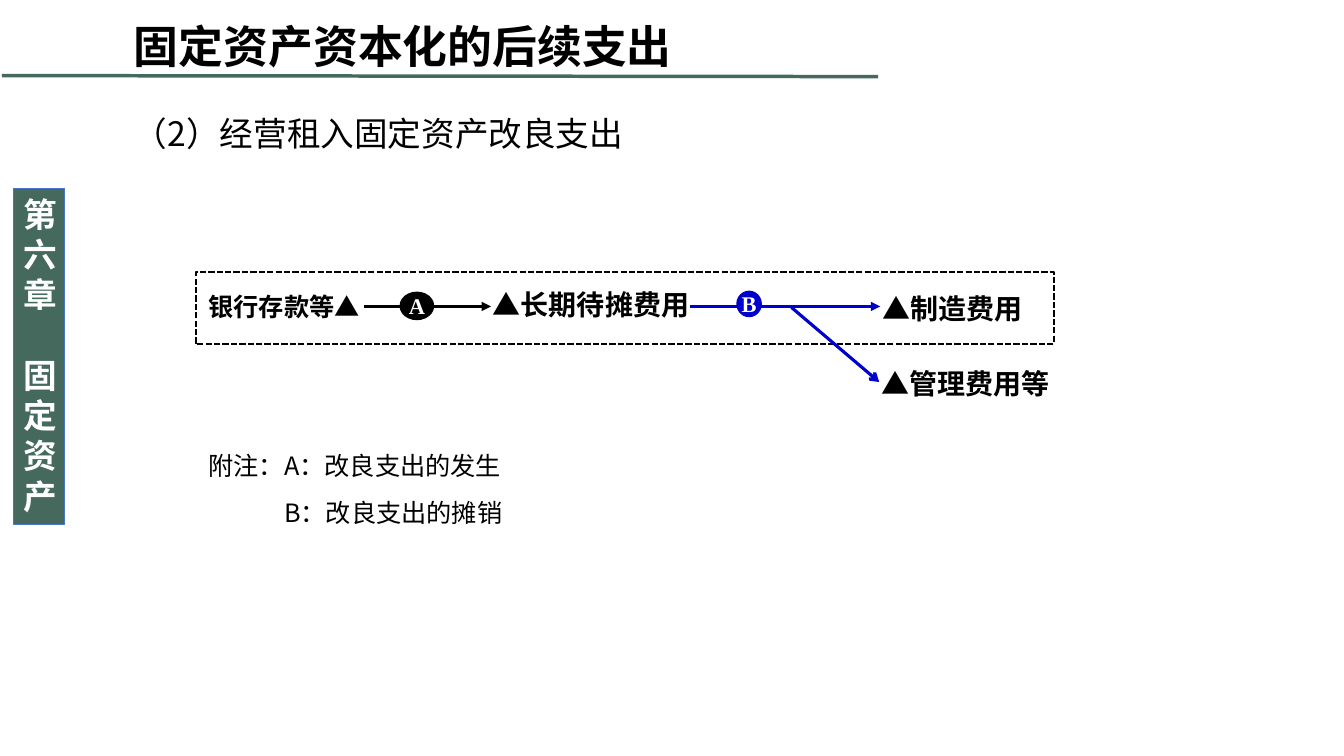
from pptx import Presentation
from pptx.dml.color import RGBColor
from pptx.enum.dml import MSO_LINE
from pptx.enum.shapes import MSO_CONNECTOR, MSO_SHAPE
from pptx.enum.text import MSO_ANCHOR, PP_ALIGN
from pptx.oxml.ns import qn
from pptx.util import Inches, Pt
from lxml import etree

BLACK = RGBColor(0, 0, 0)
WHITE = RGBColor(0xFF, 0xFF, 0xFF)
GREEN = RGBColor(0x45, 0x69, 0x5D)
BLUE = RGBColor(0x00, 0x00, 0xCC)
EDGE_BLUE = RGBColor(0x48, 0x74, 0xCB)
CJK = "Noto Sans CJK SC"
LATIN = "Times New Roman"

CHAPTER = ["第六章", "固定资产"]
CHAPTER_PITCH = 28.8

# text, left, top, width, height, size, bold
TEXTS = [
    ("固定资产资本化的后续支出", 1.23, 0.14, 7.14, 0.64, 32, True),
    ("（2）经营租入固定资产改良支出", 1.23, 1.07, 11.5, 0.8, 24, False),
    ("银行存款等▲", 1.97, 2.84, 1.88, 0.4, 18, True),
    ("▲长期待摊费用", 4.79, 2.8, 2.36, 0.44, 20, True),
    ("▲制造费用", 8.65, 2.84, 2.11, 0.44, 20, True),
    ("▲管理费用等", 8.64, 3.59, 2.13, 0.44, 20, True),
    ("附注：A：改良支出的发生", 1.97, 4.42, 3.23, 0.4, 18, False),
    ("B：改良支出的摊销", 2.72, 4.88, 2.44, 0.4, 18, False),
]

FLOW_Y = 3.04
# start, end, colour, width, arrowhead
LINES = [
    ((0.02, 0.75), (8.71, 0.76), GREEN, 2.5, None),
    ((3.61, FLOW_Y), (4.87, FLOW_Y), BLACK, 2.25, "triangle"),
    ((6.84, FLOW_Y), (8.73, FLOW_Y), BLUE, 2.25, "triangle"),
    ((7.85, 3.05), (8.72, 3.79), BLUE, 2.25, "arrow"),
]

# letter, left, top, width, height, colour
STEPS = [
    ("B", 7.31, 2.89, 0.24, 0.25, BLUE),
    ("A", 3.97, 2.9, 0.33, 0.27, BLACK),
]


def add_run(paragraph, text, size, bold, color, face=CJK):
    run = paragraph.add_run()
    run.text = text
    font = run.font
    font.size, font.bold, font.name = Pt(size), bold, face
    font.color.rgb = color
    east_asian = etree.SubElement(run._r.get_or_add_rPr(), qn("a:ea"))
    east_asian.set("typeface", face)


def add_box(slide, preset, bounds, fill, edge, edge_width):
    box = slide.shapes.add_shape(preset, *map(Inches, bounds))
    box.shadow.inherit = False
    box.fill.solid()
    box.fill.fore_color.rgb = fill
    box.line.color.rgb = edge
    box.line.width = Pt(edge_width)
    return box


def add_line(slide, start, end, color, width, head):
    line = slide.shapes.add_connector(
        MSO_CONNECTOR.STRAIGHT, *map(Inches, start + end))
    line.line.color.rgb = color
    line.line.width = Pt(width)
    if head:
        tail = etree.SubElement(line.line._get_or_add_ln(), qn("a:tailEnd"))
        tail.set("type", head)
    etree.SubElement(line._element.spPr, qn("a:effectLst"))


def add_chapter_bar(slide):
    """Stack the chapter title one character per line in a narrow bar."""
    bar = add_box(slide, MSO_SHAPE.RECTANGLE, (0.13, 1.87, 0.51, 3.33),
                  GREEN, EDGE_BLUE, 0.75)
    frame = bar.text_frame
    frame.word_wrap = True
    frame.vertical_anchor = MSO_ANCHOR.TOP
    for index, part in enumerate(CHAPTER):
        paragraph = frame.add_paragraph() if index else frame.paragraphs[0]
        paragraph.alignment = PP_ALIGN.LEFT
        paragraph.line_spacing = Pt(CHAPTER_PITCH)
        if index:
            paragraph.space_before = Pt(CHAPTER_PITCH)
        add_run(paragraph, part, 24, True, WHITE)


def add_step(slide, letter, left, top, width, height, color):
    step = add_box(slide, MSO_SHAPE.FLOWCHART_CONNECTOR,
                   (left, top, width, height), color, color, 1)
    frame = step.text_frame
    frame.word_wrap = False
    frame.margin_left = frame.margin_right = 0
    frame.margin_top = frame.margin_bottom = 0
    frame.vertical_anchor = MSO_ANCHOR.MIDDLE
    frame.paragraphs[0].alignment = PP_ALIGN.CENTER
    add_run(frame.paragraphs[0], letter, 16, True, WHITE, LATIN)


def main():
    deck = Presentation()
    deck.slide_width, deck.slide_height = Inches(13.33), Inches(7.5)
    slide = deck.slides.add_slide(deck.slide_layouts[6])

    add_chapter_bar(slide)
    flow_frame = add_box(slide, MSO_SHAPE.PARALLELOGRAM,
                         (1.94, 2.7, 8.51, 0.71), WHITE, BLACK, 1.5)
    flow_frame.adjustments[0] = 0
    flow_frame.line.dash_style = MSO_LINE.SQUARE_DOT

    for line in LINES:
        add_line(slide, *line)
    for text, left, top, width, height, size, bold in TEXTS:
        box = slide.shapes.add_textbox(
            *map(Inches, (left, top, width, height)))
        box.text_frame.word_wrap = True
        add_run(box.text_frame.paragraphs[0], text, size, bold, BLACK)
    for step in STEPS:
        add_step(slide, *step)

    deck.save("out.pptx")


if __name__ == "__main__":
    main()
